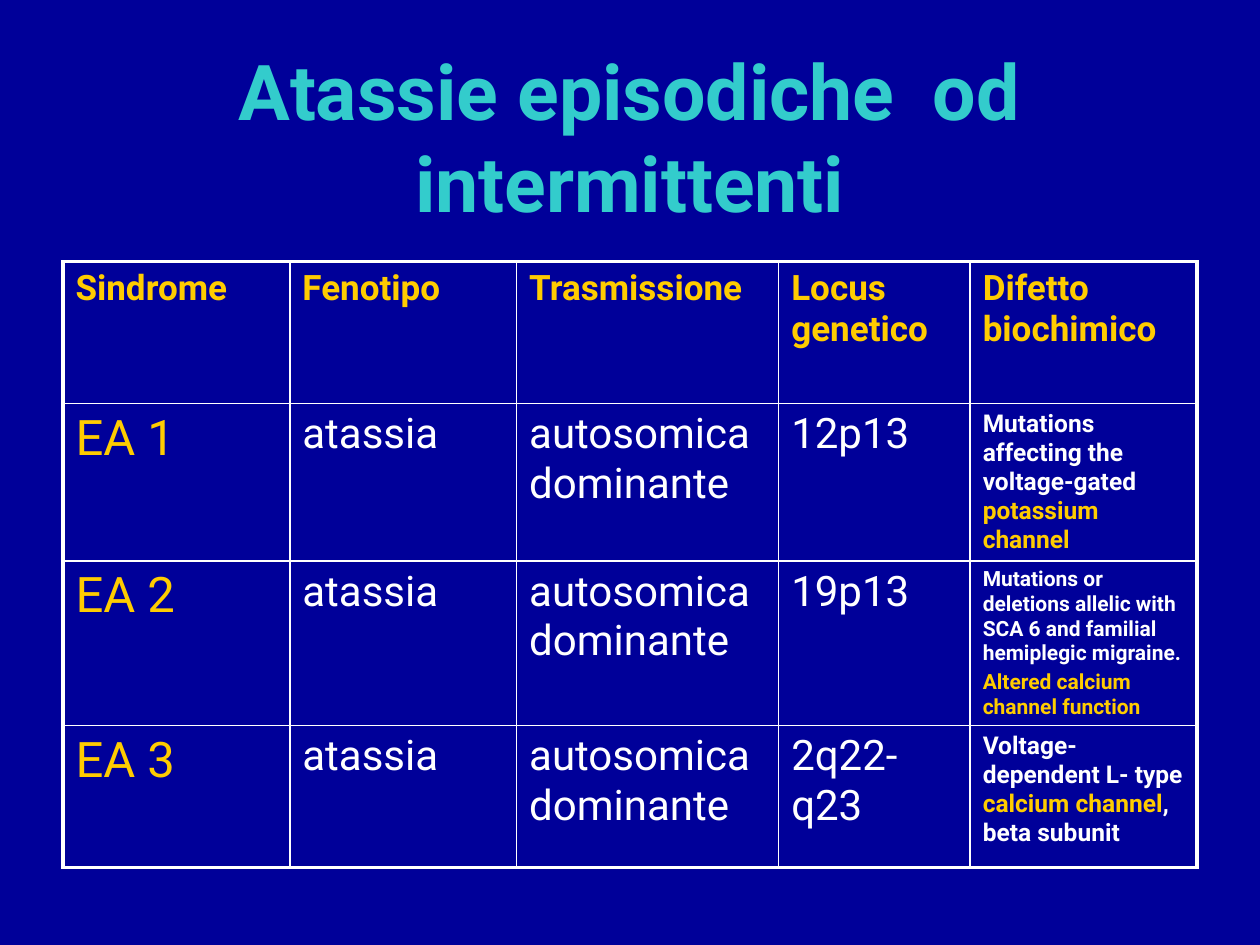
from dataclasses import dataclass

from lxml import etree
from pptx import Presentation
from pptx.dml.color import RGBColor
from pptx.enum.text import MSO_ANCHOR, MSO_AUTO_SIZE, PP_ALIGN
from pptx.oxml.ns import qn
from pptx.util import Inches, Pt

CENTER = PP_ALIGN.CENTER
MIDDLE = MSO_ANCHOR.MIDDLE
NO_AUTOFIT = MSO_AUTO_SIZE.NONE

COLORS = {
    "background": "000099",
    "title": "33CCCC",
    "accent": "FFCC00",
    "plain": "FFFFFF",
}
FONT = "Roboto"
SLIDE_WIDTH = Inches(10)
SLIDE_HEIGHT = Inches(7.5)
MARGIN = 0.05
TITLE_TOP, TITLE_HEIGHT = 0.043, 0.201
TABLE_TOP, ROW_HEIGHT = 0.277, 0.15
COLUMN_SHARES = (0.18, 0.18, 0.208, 0.152, 0.18)
INNER_BORDER, OUTER_BORDER = 1, 2.25


@dataclass(frozen=True)
class Style:
    size: int
    color: str
    bold: bool = False


@dataclass(frozen=True)
class Piece:
    text: str
    color: str = "plain"


@dataclass(frozen=True)
class Syndrome:
    name: str
    locus: str
    defect: tuple[tuple[Piece, ...], ...]
    defect_size: int = 14


TITLE = Style(44, "title", True)
HEADER = Style(20, "accent", True)
NAME = Style(28, "accent")
BODY = Style(24, "plain")

HEADINGS = ("Sindrome", "Fenotipo", "Trasmissione", "Locus genetico", "Difetto biochimico")
SYNDROMES = (
    Syndrome("EA 1", "12p13", (
        (Piece("Mutations affecting the voltage-gated "), Piece("potassium channel", "accent")),
    )),
    Syndrome("EA 2", "19p13", (
        (Piece("Mutations or deletions allelic with SCA 6 and familial hemiplegic migraine."),),
        (Piece("Altered calcium channel function", "accent"),),
    ), 12),
    Syndrome("EA 3", "2q22-q23", (
        (Piece("Voltage-dependent L- type "), Piece("calcium channel", "accent"),
         Piece(", beta subunit")),
    )),
)


def across(share: float) -> int:
    return round(SLIDE_WIDTH * share)


def down(share: float) -> int:
    return round(SLIDE_HEIGHT * share)


def format_run(run, style: Style) -> None:
    run.font.name = FONT
    run.font.size = Pt(style.size)
    run.font.bold = style.bold
    run.font.color.rgb = RGBColor.from_string(COLORS[style.color])


def write_text(text_frame, text: str, style: Style) -> None:
    text_frame.text = text
    format_run(text_frame.paragraphs[0].runs[0], style)


def write_defect(text_frame, syndrome: Syndrome) -> None:
    for index, pieces in enumerate(syndrome.defect):
        paragraph = text_frame.add_paragraph() if index else text_frame.paragraphs[0]
        if index:
            paragraph.space_before = Pt(syndrome.defect_size * 0.2)
        for piece in pieces:
            run = paragraph.add_run()
            run.text = piece.text
            format_run(run, Style(syndrome.defect_size, piece.color, True))


def set_borders(cell, outer_sides: dict[str, bool]) -> None:
    properties = cell._tc.get_or_add_tcPr()
    for position, (side, outer) in enumerate(outer_sides.items()):
        width = Pt(OUTER_BORDER if outer else INNER_BORDER)
        line = etree.Element(qn(f"a:{side}"), w=str(int(width)))
        fill = etree.SubElement(line, qn("a:solidFill"))
        etree.SubElement(fill, qn("a:srgbClr"), val=COLORS["plain"])
        properties.insert(position, line)


def add_title(slide, text: str) -> None:
    title = slide.shapes.title
    title.left, title.top = across(MARGIN), down(TITLE_TOP)
    title.width, title.height = across(1 - 2 * MARGIN), down(TITLE_HEIGHT)
    text_frame = title.text_frame
    text_frame.auto_size = NO_AUTOFIT
    text_frame.word_wrap = True
    text_frame.vertical_anchor = MIDDLE
    write_text(text_frame, text, TITLE)
    text_frame.paragraphs[0].alignment = CENTER


def add_syndrome_table(slide) -> None:
    row_count, column_count = len(SYNDROMES) + 1, len(HEADINGS)
    table = slide.shapes.add_table(
        row_count, column_count, across(MARGIN), down(TABLE_TOP),
        across(sum(COLUMN_SHARES)), down(ROW_HEIGHT * row_count),
    ).table
    table.first_row = False
    table.horz_banding = False
    for column, share in zip(table.columns, COLUMN_SHARES):
        column.width = across(share)

    for column_index, heading in enumerate(HEADINGS):
        write_text(table.cell(0, column_index).text_frame, heading, HEADER)
    for row_index, syndrome in enumerate(SYNDROMES, start=1):
        write_text(table.cell(row_index, 0).text_frame, syndrome.name, NAME)
        values = ("atassia", "autosomica dominante", syndrome.locus)
        for column_index, value in enumerate(values, start=1):
            write_text(table.cell(row_index, column_index).text_frame, value, BODY)
        write_defect(table.cell(row_index, column_count - 1).text_frame, syndrome)

    for row_index, row in enumerate(table.rows):
        row.height = down(ROW_HEIGHT)
        for column_index, cell in enumerate(row.cells):
            cell.fill.background()
            set_borders(cell, {
                "lnL": column_index == 0,
                "lnR": column_index == column_count - 1,
                "lnT": row_index == 0,
                "lnB": row_index == row_count - 1,
            })


def main() -> None:
    presentation = Presentation()
    presentation.slide_width = SLIDE_WIDTH
    presentation.slide_height = SLIDE_HEIGHT
    slide = presentation.slides.add_slide(presentation.slide_layouts.get_by_name("Title Only"))
    slide.background.fill.solid()
    slide.background.fill.fore_color.rgb = RGBColor.from_string(COLORS["background"])
    add_title(slide, "Atassie episodiche  od intermittenti")
    add_syndrome_table(slide)
    presentation.save("out.pptx")


if __name__ == "__main__":
    main()
